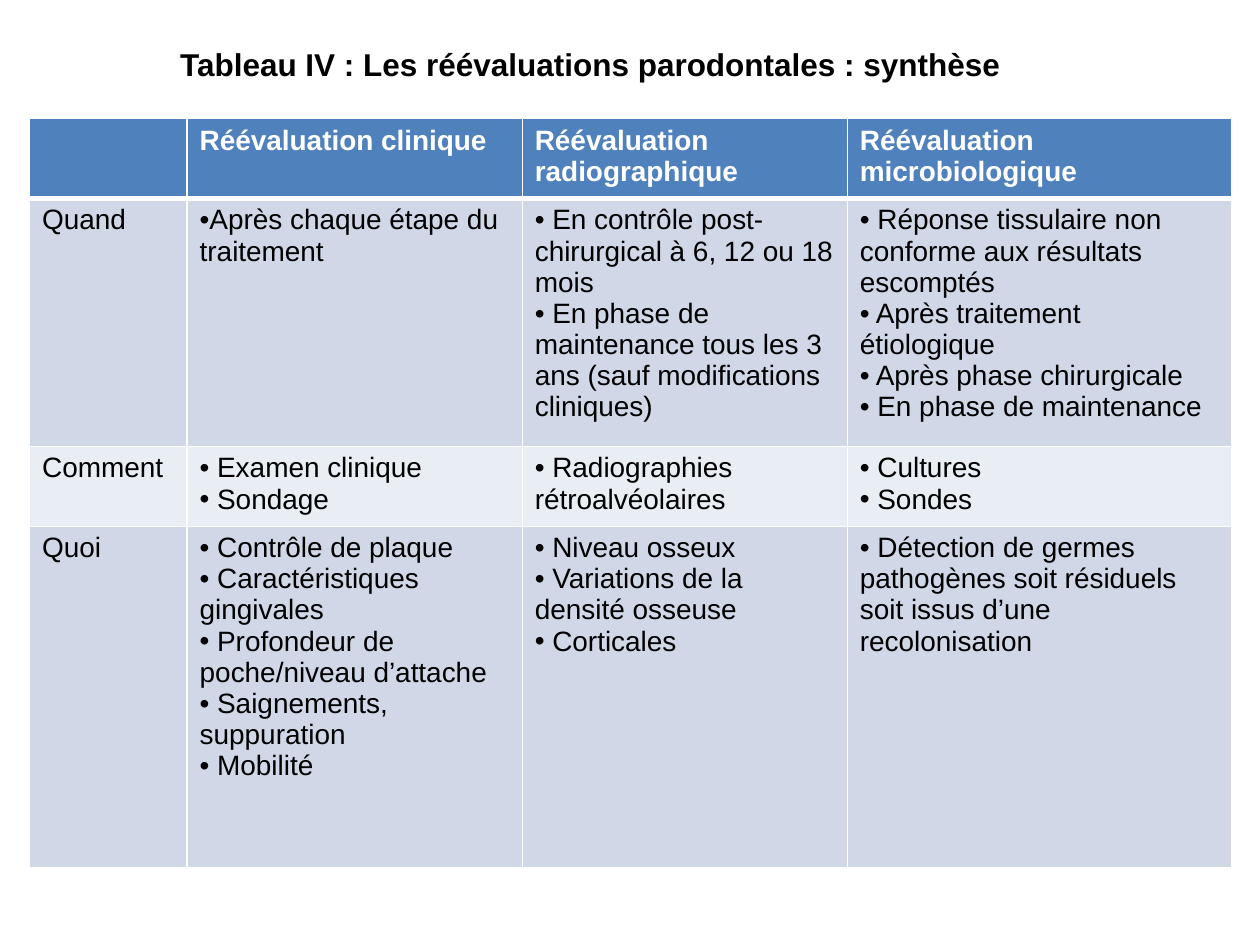
from dataclasses import dataclass

from lxml.etree import SubElement
from pptx import Presentation
from pptx.dml.color import RGBColor
from pptx.enum.text import MSO_ANCHOR, MSO_AUTO_SIZE, PP_ALIGN
from pptx.oxml import parse_xml
from pptx.oxml.ns import nsdecls, qn
from pptx.util import Emu, Inches, Pt


@dataclass(frozen=True)
class Theme:
    font: str = "Arial"
    title_size: int = 18
    body_size: int = 16
    ink: str = "000000"
    paper: str = "FFFFFF"
    header: str = "4F81BD"
    bands: tuple = ("D0D8E8", "E9EDF4")
    rule: int = 1
    header_rule: int = 3


class SlideBuilder:
    """Places elements in percentages of the slide's width and height."""

    def __init__(self, deck, theme):
        self.deck, self.theme = deck, theme
        self.page = deck.slides.add_slide(deck.slide_layouts[5])

    def across(self, percent):
        return Emu(round(self.deck.slide_width * percent / 100))

    def down(self, percent):
        return Emu(round(self.deck.slide_height * percent / 100))

    def style(self, para, size, color, bold=False):
        para.alignment = PP_ALIGN.LEFT
        for span in para.runs:
            span.font.name = self.theme.font
            span.font.size = Pt(size)
            span.font.bold = bold
            span.font.color.rgb = RGBColor.from_string(color)

    def title(self, text, left, top, width, height):
        box = self.page.shapes.title
        box.left, box.top = self.across(left), self.down(top)
        box.width, box.height = self.across(width), self.down(height)
        frame = box.text_frame
        frame.text = text
        frame.word_wrap = True
        frame.auto_size = MSO_AUTO_SIZE.SHAPE_TO_FIT_TEXT
        frame.vertical_anchor = MSO_ANCHOR.TOP
        self.style(frame.paragraphs[0], self.theme.title_size, self.theme.ink, bold=True)

    def table(self, headers, rows, left, top, widths, heights):
        grid = self.page.shapes.add_table(
            len(rows) + 1, len(headers), self.across(left), self.down(top),
            self.across(sum(widths)), self.down(sum(heights))).table
        for column, width in zip(grid.columns, widths):
            column.width = self.across(width)
        for row, height in zip(grid.rows, heights):
            row.height = self.down(height)
        for cell, text in zip(grid.rows[0].cells, headers):
            self.cell(cell, text, self.theme.header, self.theme.paper, bold=True)
            self.borders(cell, bottom=self.theme.header_rule)
        for index, (label, *lists) in enumerate(rows):
            fill = self.theme.bands[index % 2]
            top_rule = self.theme.rule if index else self.theme.header_rule
            for cell, content in zip(grid.rows[index + 1].cells, [label, *lists]):
                self.cell(cell, content, fill, self.theme.ink)
                self.borders(cell, top=top_rule)

    def cell(self, cell, content, fill, color, bold=False):
        """Fill a cell with plain text, or with bullets when given a list."""
        cell.fill.solid()
        cell.fill.fore_color.rgb = RGBColor.from_string(fill)
        bulleted = isinstance(content, list)
        cell.text_frame.text = "\n".join(content) if bulleted else content
        for para in cell.text_frame.paragraphs:
            self.style(para, self.theme.body_size, color, bold)
            if bulleted:
                self.bullet(para)

    def bullet(self, para):
        """Add a bullet whose wrapped lines return to the cell's margin."""
        properties = para._p.get_or_add_pPr()
        properties.set("marL", "0")
        properties.set("indent", "0")
        SubElement(properties, qn("a:buFont"), typeface=self.theme.font)
        SubElement(properties, qn("a:buChar"), char="•")

    def borders(self, cell, top=None, bottom=None):
        rule = self.theme.rule
        sides = {"lnL": rule, "lnR": rule, "lnT": top or rule, "lnB": bottom or rule}
        properties = cell._tc.get_or_add_tcPr()
        for position, (side, points) in enumerate(sides.items()):
            properties.insert(position, parse_xml(
                f'<a:{side} {nsdecls("a")} w="{Pt(points)}"><a:solidFill>'
                f'<a:srgbClr val="{self.theme.paper}"/></a:solidFill></a:{side}>'))


HEADERS = ["", "Réévaluation clinique", "Réévaluation radiographique",
           "Réévaluation microbiologique"]
ROWS = [
    ("Quand",
     ["Après chaque étape du traitement"],
     [" En contrôle post-chirurgical à 6, 12 ou 18 mois",
      " En phase de maintenance tous les 3 ans (sauf modifications cliniques)"],
     [" Réponse tissulaire non conforme aux résultats escomptés",
      " Après traitement étiologique",
      " Après phase chirurgicale",
      " En phase de maintenance"]),
    ("Comment",
     [" Examen clinique", " Sondage"],
     [" Radiographies rétroalvéolaires"],
     [" Cultures", " Sondes"]),
    ("Quoi",
     [" Contrôle de plaque",
      " Caractéristiques gingivales",
      " Profondeur de poche/niveau d’attache",
      " Saignements, suppuration",
      " Mobilité"],
     [" Niveau osseux", " Variations de la densité osseuse", " Corticales"],
     [" Détection de germes pathogènes soit résiduels soit issus d’une recolonisation"]),
]


def main():
    deck = Presentation()
    deck.slide_width, deck.slide_height = Inches(10), Inches(7.5)
    builder = SlideBuilder(deck, Theme())
    builder.title("Tableau IV : Les réévaluations parodontales : synthèse",
                  left=13.3, top=4.1, width=75.8, height=5.4)
    builder.table(HEADERS, ROWS, left=2.35, top=12.55,
                  widths=[12.5, 26.6, 25.8, 30.5],
                  heights=[8.3, 26.25, 8.4, 36.15])
    deck.save("out.pptx")


if __name__ == "__main__":
    main()
